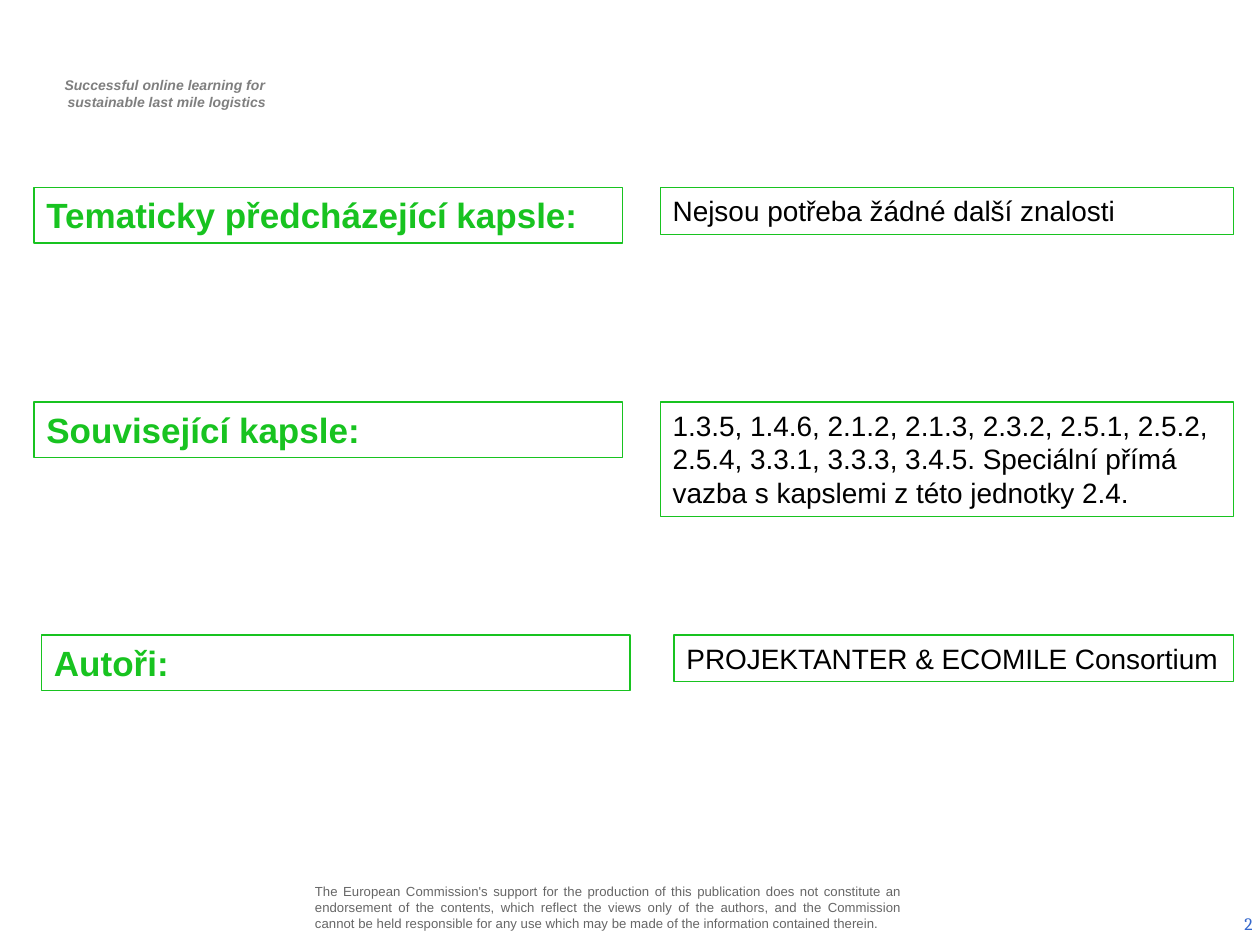
"""Build the slide listing related capsules and authors of a learning unit."""
import pptx
import pptx.dml.color
import pptx.enum.shapes
import pptx.enum.text
import pptx.util

COLORS = {"green": "18C320", "white": "FFFFFF", "black": "000000",
          "header": "7F7F7F", "footer": "666666", "number": "3366CC"}
ALIGN = pptx.enum.text.PP_ALIGN
ANCHOR = pptx.enum.text.MSO_ANCHOR
inch = pptx.util.Inches


def rgb(name):
    return pptx.dml.color.RGBColor.from_string(COLORS[name])


def write(sp, lines, size, color, font="Arial", bold=False, italic=False,
          align=ALIGN.LEFT, anchor=ANCHOR.TOP, inset=(0.1, 0.05)):
    tf = sp.text_frame
    tf.word_wrap = True
    tf.vertical_anchor = anchor
    tf.margin_left = tf.margin_right = inch(inset[0])
    tf.margin_top = tf.margin_bottom = inch(inset[1])
    for i, line in enumerate(lines):
        p = tf.add_paragraph() if i else tf.paragraphs[0]
        p.alignment = align
        r = p.add_run()
        r.text = line
        r.font.name = font
        r.font.size = pptx.util.Pt(size)
        r.font.bold = bold
        r.font.italic = italic
        r.font.color.rgb = rgb(color)


prs = pptx.Presentation()
prs.slide_width, prs.slide_height = inch(10), inch(7.5)
s = prs.slides.add_slide(prs.slide_layouts[6])

header = s.shapes.add_textbox(inch(0.29), inch(0.56), inch(2.03), inch(0.37))
write(header, ["Successful online learning for ", "sustainable last mile logistics"],
      8, "header", bold=True, italic=True, align=ALIGN.CENTER)
for p in header.text_frame.paragraphs:
    p._p.get_or_add_pPr().set("marL", str(inch(0.04)))

footer = s.shapes.add_textbox(inch(2.46), inch(6.95), inch(4.73), inch(0.5))
write(footer, ["The European Commission's support for the production of this publication "
               "does not constitute an endorsement of the contents, which reflect the views "
               "only of the authors, and the Commission cannot be held responsible for any "
               "use which may be made of the information contained therein."],
      7.5, "footer", align=ALIGN.JUSTIFY, anchor=ANCHOR.MIDDLE, inset=(0.04, 0.04))

number = s.shapes.add_textbox(inch(7.71), inch(7.13), inch(2.33), inch(0.4))
write(number, ["2"], 10, "number", font="Cambria", align=ALIGN.RIGHT, anchor=ANCHOR.MIDDLE)

label_width, label_height, right_edge = 4.67, 0.44, 9.79
rows = [
    (1.49, 0.27, "Tematicky předcházející kapsle:",
     5.24, 0.37, "Nejsou potřeba žádné další znalosti"),
    (3.19, 0.27, "Související kapsle:",
     5.24, 0.91, "1.3.5, 1.4.6, 2.1.2, 2.1.3, 2.3.2, 2.5.1, 2.5.2, 2.5.4, 3.3.1, 3.3.3, "
                 "3.4.5. Speciální přímá vazba s kapslemi z této jednotky 2.4."),
    (5.04, 0.33, "Autoři:",
     5.35, 0.37, "PROJEKTANTER & ECOMILE Consortium"),
]
for top, label_left, label, value_left, value_height, value in rows:
    cells = [(label_left, label_width, label_height, label, 20, "green", True),
             (value_left, right_edge - value_left, value_height, value, 16, "black", False)]
    for left, width, height, text, size, color, bold in cells:
        sp = s.shapes.add_shape(pptx.enum.shapes.MSO_SHAPE.RECTANGLE,
                                inch(left), inch(top), inch(width), inch(height))
        sp.shadow.inherit = False
        sp.fill.solid()
        sp.fill.fore_color.rgb = rgb("white")
        sp.line.color.rgb = rgb("green")
        sp.line.width = pptx.util.Pt(0.75)
        write(sp, [text], size, color, bold=bold)

prs.save("out.pptx")
